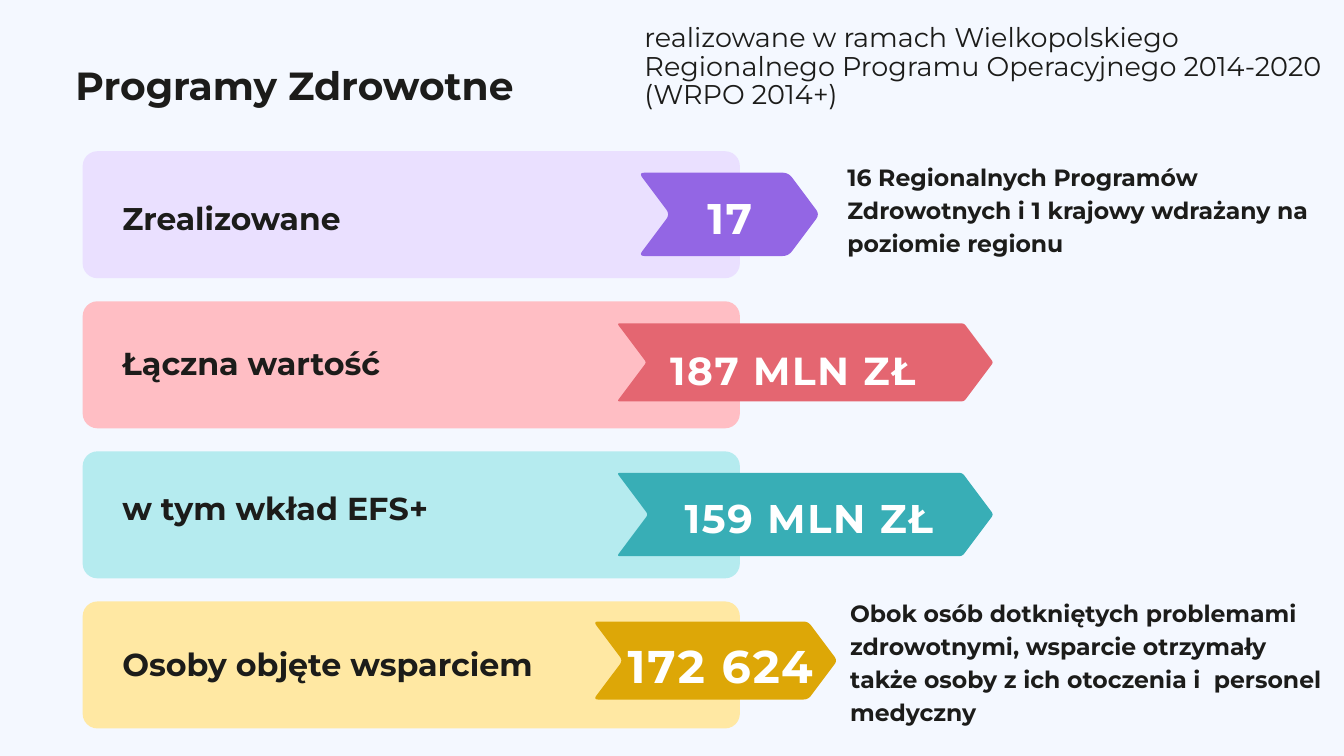
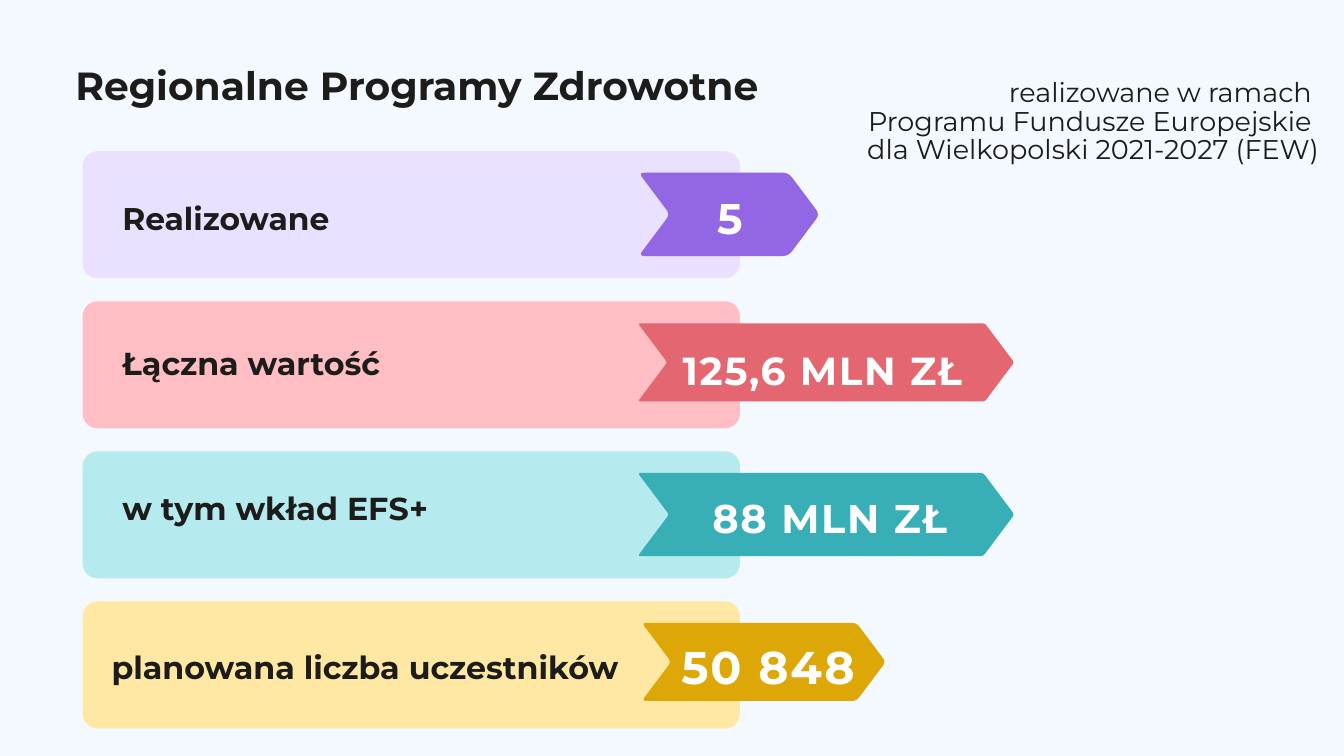
"""Builds two slides that sum up health programmes as coloured bands with value arrows."""
import math

import pptx
import pptx.dml.color
import pptx.enum.shapes
import pptx.enum.text
import pptx.util
from lxml import etree

FONT = "Montserrat"
COLOURS = {
    "background": "F4F8FF", "ink": "1C1C1A", "white": "FFFFFF",
    "lilac": "EAE0FF", "violet": "9366E4", "pink": "FFBEC4", "red": "E46671",
    "aqua": "B5EBEF", "teal": "38AEB6", "cream": "FFE8A3", "gold": "DDA707",
}
ALIGN = pptx.enum.text.PP_ALIGN

SLIDES = [
    {
        "title": "Programy Zdrowotne",
        "subtitle": ["realizowane w ramach Wielkopolskiego Regionalnego Programu "
                     "Operacyjnego 2014-2020 (WRPO 2014+)"],
        "subtitle_box": (9.59, 0.36, 10.23, 1.3),
        "subtitle_align": ALIGN.LEFT,
        "rows": [
            {"label": "Zrealizowane", "value": "17", "arrow_left": 9.54, "value_centre": 10.86},
            {"label": "Łączna wartość", "value": "187 MLN ZŁ", "arrow_left": 9.2, "value_centre": 11.8},
            {"label": "w tym wkład EFS+", "value": "159 MLN ZŁ", "arrow_left": 9.2, "value_centre": 12.04},
            {"label": "Osoby objęte wsparciem", "value": "172 624", "arrow_left": 8.86, "value_centre": 10.72},
        ],
        "remarks": [
            ("16 Regionalnych Programów Zdrowotnych i 1 krajowy wdrażany na poziomie regionu",
             (12.61, 2.36, 6.89, 1.44)),
            ("Obok osób dotkniętych problemami zdrowotnymi, wsparcie otrzymały także osoby "
             "z ich otoczenia i  personel medyczny", (12.65, 8.85, 7.07, 1.92)),
        ],
    },
    {
        "title": "Regionalne Programy Zdrowotne",
        "subtitle": ["realizowane w ramach ", "Programu Fundusze Europejskie ",
                     "dla Wielkopolski 2021-2027 (FEW)"],
        "subtitle_box": (11.92, 1.18, 7.71, 1.25),
        "subtitle_align": ALIGN.RIGHT,
        "rows": [
            {"label": "Realizowane", "value": "5", "arrow_left": 9.54, "value_centre": 10.86},
            {"label": "Łączna wartość", "value": "125,6 MLN ZŁ", "arrow_left": 9.51, "value_centre": 12.24},
            {"label": "w tym wkład EFS+", "value": "88 MLN ZŁ", "arrow_left": 9.51, "value_centre": 12.35},
            {"label": "planowana liczba uczestników", "value": "50 848", "arrow_left": 9.58,
             "value_centre": 11.43, "label_left": 1.66, "drop": 0.02, "label_drop": 0.04},
        ],
        "remarks": [],
    },
]

ROW_STYLES = [
    {"band": "lilac", "arrow": "violet", "arrow_top": 0.32, "arrow_size": (2.63, 1.24), "rounding": 0.09,
     "label_top": 0.62, "label_format": {"size": 33.6, "line": 47},
     "value_top": 0.47, "value_width": 0.79, "value_format": {"size": 45.9, "line": 64.2, "spacing": 1.9}},
    {"band": "pink", "arrow": "red", "arrow_top": 0.33, "arrow_size": (5.57, 1.16), "rounding": 0.04,
     "label_top": 0.54, "label_format": {"size": 34, "line": 47.6},
     "value_top": 0.56, "value_width": 4.32, "value_format": {"size": 41.9, "line": 58.6, "spacing": 1.8}},
    {"band": "aqua", "arrow": "teal", "arrow_top": 0.32, "arrow_size": (5.57, 1.24), "rounding": 0.05,
     "label_top": 0.46, "label_format": {"size": 34, "line": 47.6},
     "value_top": 0.51, "value_width": 4.08, "value_format": {"size": 42.9, "line": 60, "spacing": 1.8}},
    {"band": "cream", "arrow": "gold", "arrow_top": 0.3, "arrow_size": (3.58, 1.16), "rounding": 0.07,
     "label_top": 0.55, "label_format": {"size": 34, "line": 47.6},
     "value_top": 0.4, "value_width": 3.87, "value_format": {"size": 49.1, "line": 68.7, "spacing": 2.1}},
]

SLIDE_WIDTH, SLIDE_HEIGHT = 20, 11.25
BAND_LEFT, BAND_TOP, BAND_WIDTH, BAND_HEIGHT = 1.23, 2.25, 9.78, 1.89
BAND_PITCH = 6.7 / 3
BAND_RADIUS = 0.22
LABEL_LEFT, LABEL_WIDTH, LABEL_HEIGHT = 1.82, 7.94, 0.63
TITLE_BOX = (1.12, 0.99, 10.67, 0.63)
ARROW_SLOPE = 0.75
CURVE_STEPS = 6


def inches(*lengths):
    return [pptx.util.Inches(length) for length in lengths]


def colour(name):
    return pptx.dml.color.RGBColor.from_string(COLOURS[name])


def write(shape, lines, size, line, bold=True, ink="ink", align=ALIGN.LEFT, spacing=None):
    frame = shape.text_frame
    frame_format = {
        "word_wrap": True, "auto_size": pptx.enum.text.MSO_AUTO_SIZE.NONE,
        "vertical_anchor": pptx.enum.text.MSO_ANCHOR.TOP,
        "margin_left": 0, "margin_right": 0, "margin_top": 0, "margin_bottom": 0,
    }
    for name, setting in frame_format.items():
        setattr(frame, name, setting)
    frame.text = "\n".join(lines)
    for paragraph in frame.paragraphs:
        paragraph_format = {"alignment": align, "line_spacing": pptx.util.Pt(line),
                            "space_before": pptx.util.Pt(0)}
        for name, setting in paragraph_format.items():
            setattr(paragraph, name, setting)
        run = paragraph.runs[0]
        for name, setting in {"name": FONT, "size": pptx.util.Pt(size), "bold": bold}.items():
            setattr(run.font, name, setting)
        run.font.color.rgb = colour(ink)
        if spacing:
            run._r.get_or_add_rPr().set("spc", str(round(spacing * 100)))


def place(shape, box):
    for name, length in zip(("left", "top", "width", "height"), inches(*box)):
        setattr(shape, name, length)


def add_text(slide, text, box, **text_format):
    write(slide.shapes.add_textbox(*inches(*box)), [text], **text_format)


def paint(shape, fill):
    shape.shadow.inherit = False
    shape.fill.solid()
    shape.fill.fore_color.rgb = colour(fill)
    shape.line.fill.background()


def step_towards(start, end, distance):
    share = distance / math.dist(start, end)
    return tuple(a + (b - a) * share for a, b in zip(start, end))


def round_corners(corners, rounding):
    points = []
    for index, corner in enumerate(corners):
        entry = step_towards(corner, corners[index - 1], rounding)
        leave = step_towards(corner, corners[(index + 1) % len(corners)], rounding)
        for step in range(CURVE_STEPS + 1):
            t = step / CURVE_STEPS
            points.append(tuple((1 - t) ** 2 * a + 2 * t * (1 - t) * b + t ** 2 * c
                                for a, b, c in zip(entry, corner, leave)))
    return points


def add_arrow(slide, left, top, width, height, rounding, fill):
    depth = ARROW_SLOPE * height / 2
    tail, tip = left - 0.4 * rounding, left + width + 0.3 * rounding
    middle, bottom = top + height / 2, top + height
    corners = [(tail, top), (tip - depth, top), (tip, middle),
               (tip - depth, bottom), (tail, bottom), (tail + depth, middle)]
    points = [inches(*point) for point in round_corners(corners, rounding)]
    builder = slide.shapes.build_freeform(*points[0])
    builder.add_line_segments(points[1:], close=True)
    paint(builder.convert_to_shape(), fill)


def add_row(slide, index, row, style):
    top = BAND_TOP + index * BAND_PITCH
    drop = row.get("drop", 0)
    band = slide.shapes.add_shape(pptx.enum.shapes.MSO_SHAPE.ROUNDED_RECTANGLE,
                                  *inches(BAND_LEFT, top, BAND_WIDTH, BAND_HEIGHT))
    band.adjustments[0] = BAND_RADIUS / BAND_HEIGHT
    paint(band, style["band"])
    add_arrow(slide, row["arrow_left"], top + style["arrow_top"] + drop, *style["arrow_size"],
              style["rounding"], style["arrow"])
    label_top = top + style["label_top"] + row.get("label_drop", 0)
    add_text(slide, row["label"],
             (row.get("label_left", LABEL_LEFT), label_top, LABEL_WIDTH, LABEL_HEIGHT),
             **style["label_format"])
    width = style["value_width"]
    add_text(slide, row["value"],
             (row["value_centre"] - width / 2, top + style["value_top"] + drop, width, 0.85),
             ink="white", align=ALIGN.CENTER, **style["value_format"])


def add_heading(slide, content):
    title, subtitle = slide.shapes.title, slide.placeholders[1]
    place(title, TITLE_BOX)
    write(title, [content["title"]], size=42, line=44.5)
    place(subtitle, content["subtitle_box"])
    write(subtitle, content["subtitle"], size=29, line=30.7, bold=False,
          align=content["subtitle_align"])
    for paragraph in subtitle.text_frame.paragraphs:
        properties = paragraph._p.get_or_add_pPr()
        for name in ("marL", "indent"):
            properties.set(name, "0")
        etree.SubElement(properties, pptx.oxml.ns.qn("a:buNone"))


def main():
    presentation = pptx.Presentation()
    presentation.slide_width, presentation.slide_height = inches(SLIDE_WIDTH, SLIDE_HEIGHT)
    background = presentation.slide_master.background.fill
    background.solid()
    background.fore_color.rgb = colour("background")
    for content in SLIDES:
        slide = presentation.slides.add_slide(presentation.slide_layouts[1])
        add_heading(slide, content)
        for index, (row, style) in enumerate(zip(content["rows"], ROW_STYLES)):
            add_row(slide, index, row, style)
        for text, box in content["remarks"]:
            add_text(slide, text, box, size=25.2, line=35.2)
    presentation.save("out.pptx")


if __name__ == "__main__":
    main()
